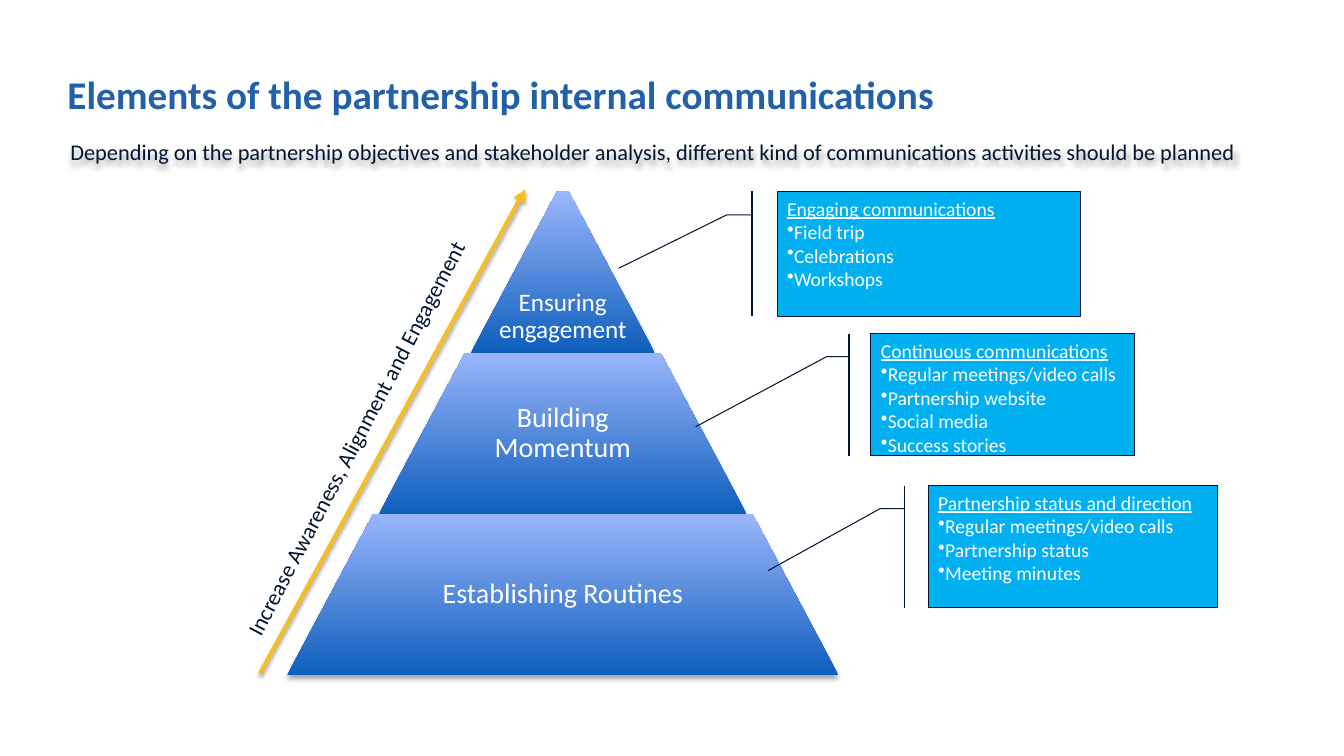
from dataclasses import dataclass

from lxml import etree
from pptx import Presentation
from pptx.dml.color import RGBColor
from pptx.enum.shapes import MSO_CONNECTOR, MSO_SHAPE
from pptx.enum.text import MSO_ANCHOR, MSO_AUTO_SIZE, PP_ALIGN
from pptx.oxml.ns import qn
from pptx.util import Pt

TRAPEZOID = MSO_SHAPE.TRAPEZOID
CALLOUT = MSO_SHAPE.LINE_CALLOUT_2_BORDER_AND_ACCENT_BAR
STRAIGHT = MSO_CONNECTOR.STRAIGHT
TOP, MIDDLE, BOTTOM = MSO_ANCHOR.TOP, MSO_ANCHOR.MIDDLE, MSO_ANCHOR.BOTTOM
LEFT, CENTER = PP_ALIGN.LEFT, PP_ALIGN.CENTER


@dataclass(frozen=True)
class Theme:
    font: str = "Calibri"
    title: RGBColor = RGBColor(0x22, 0x60, 0xA8)
    ink: RGBColor = RGBColor(0x02, 0x16, 0x31)
    white: RGBColor = RGBColor(0xFF, 0xFF, 0xFF)
    callout: RGBColor = RGBColor(0x00, 0xB0, 0xF0)
    arrow: RGBColor = RGBColor(0xF4, 0xBE, 0x28)
    band_dark: RGBColor = RGBColor(0x0E, 0x5F, 0xBC)
    band_light: RGBColor = RGBColor(0x9B, 0xB5, 0xFC)
    title_size: int = 28
    band_size: int = 20
    top_band_size: int = 18
    body_size: int = 16
    callout_size: int = 14


THEME = Theme()

# Text, type size, share of the band's width, anchor and bottom inset, from the top down
BANDS = [
    ("Ensuring engagement", THEME.top_band_size, 1, BOTTOM, 6),
    ("Building Momentum", THEME.band_size, 0.65, MIDDLE, 3),
    ("Establishing Routines", THEME.band_size, 0.65, MIDDLE, 3),
]

# Box, leader end (share of height, share of width), heading and items
CALLOUTS = [
    ((663.1, 347, 206.6, 87.1), (0.696, -0.554), "Partnership status and direction",
     ["Regular meetings/video calls", "Partnership status", "Meeting minutes"]),
    ((622.1, 238.3, 188.6, 87.1), (0.764, -0.664), "Continuous communications",
     ["Regular meetings/video calls", "Partnership website", "Social media",
      "Success stories"]),
    ((555.1, 136.8, 216.7, 89.3), (0.614, -0.522), "Engaging communications",
     ["Field trip", "Celebrations", "Workshops"]),
]


def points(box):
    return [Pt(length) for length in box]


def add_span(para, text, size, color, bold=False, underline=False):
    span = para.add_run()
    span.text = text
    font = span.font
    font.name, font.size, font.bold, font.underline = THEME.font, Pt(size), bold, underline
    font.color.rgb = color


def set_frame(frame, anchor, insets=(7.2, 3.6, 7.2, 3.6)):
    frame.word_wrap = True
    frame.auto_size = MSO_AUTO_SIZE.NONE
    frame.vertical_anchor = anchor
    (frame.margin_left, frame.margin_top,
     frame.margin_right, frame.margin_bottom) = points(insets)


def add_shadow(shape, blur=3.1, distance=1.8):
    """Append a soft downward shadow; call it after fill and line are set."""
    effects = etree.SubElement(shape.element.spPr, qn("a:effectLst"))
    shadow = etree.SubElement(
        effects, qn("a:outerShdw"), blurRad=str(Pt(blur)), dist=str(Pt(distance)),
        dir="5400000", rotWithShape="0")
    color = etree.SubElement(shadow, qn("a:srgbClr"), val="000000")
    etree.SubElement(color, qn("a:alpha"), val="35000")


def add_text(page, box, text, size, color, anchor=TOP, **frame_options):
    textbox = page.shapes.add_textbox(*points(box))
    set_frame(textbox.text_frame, anchor, **frame_options)
    add_span(textbox.text_frame.paragraphs[0], text, size, color)
    return textbox


def add_title(page, box):
    title = page.shapes.title
    title.left, title.top, title.width, title.height = points(box)
    set_frame(title.text_frame, BOTTOM, (0, 5.8, 7.2, 3.6))
    para = title.text_frame.paragraphs[0]
    para.alignment = LEFT
    add_span(para, "Elements of the partnership internal communications",
             THEME.title_size, THEME.title, bold=True)


def add_pyramid(page, box):
    """Stack equal-height bands whose widths grow evenly to the box width."""
    left, top, width, height = box
    band_height = height / len(BANDS)
    middle = left + width / 2
    for index, (text, size, share, anchor, bottom_inset) in enumerate(BANDS):
        band_width = width * (index + 1) / len(BANDS)
        band_top = top + index * band_height
        band = page.shapes.add_shape(TRAPEZOID, *points(
            (middle - band_width / 2, band_top, band_width, band_height)))
        band.adjustments[0] = 0.535
        band.fill.gradient()
        band.fill.gradient_angle = 90
        for stop, color in zip(band.fill.gradient_stops, (THEME.band_dark, THEME.band_light)):
            stop.color.rgb = color
        band.line.fill.background()
        add_shadow(band)

        label_width = band_width * share
        label = add_text(
            page, (middle - label_width / 2, band_top, label_width, band_height),
            text, size, THEME.white, anchor, insets=(3, 3, 3, bottom_inset))
        para = label.text_frame.paragraphs[0]
        para.alignment = CENTER
        para.line_spacing = 0.9


def add_callout(page, box, leader_end, heading, items):
    callout = page.shapes.add_shape(CALLOUT, *points(box))
    leader = (0.188, -0.083, 0.188, -0.167, *leader_end)
    for index, value in enumerate(leader):
        callout.adjustments[index] = value
    callout.shadow.inherit = False
    callout.fill.solid()
    callout.fill.fore_color.rgb = THEME.callout
    callout.line.color.rgb = THEME.ink
    callout.line.width = Pt(0.75)

    frame = callout.text_frame
    set_frame(frame, TOP)
    para = frame.paragraphs[0]
    para.alignment = LEFT
    add_span(para, heading, THEME.callout_size, THEME.white, underline=True)
    for item in items:
        para = frame.add_paragraph()
        para.alignment = LEFT
        etree.SubElement(para._p.get_or_add_pPr(), qn("a:buChar"), char="•")
        add_span(para, item, THEME.callout_size, THEME.white)


def add_rising_arrow(page, box):
    """Draw an arrow from the box's bottom left to its top right, with its label."""
    left, top, width, height = box
    arrow = page.shapes.add_connector(
        STRAIGHT, *points((left, top + height, left + width, top)))
    arrow.line.color.rgb = THEME.arrow
    arrow.line.width = Pt(3)
    etree.SubElement(arrow.element.spPr.find(qn("a:ln")), qn("a:tailEnd"), type="triangle")
    add_shadow(arrow)

    label_width, label_height = 351.4, 28
    label_middle = left + width / 2 - 20.5
    label_center = top + height / 2 - 4.8
    label = add_text(
        page, (label_middle - label_width / 2, label_center - label_height / 2,
               label_width, label_height),
        "Increase Awareness, Alignment and Engagement", THEME.body_size, THEME.ink)
    label.rotation = 297.7


def add_communications_page(deck):
    page = deck.slides.add_slide(deck.slide_layouts[5])
    add_title(page, (48.2, 15.1, 738.7, 72))
    add_pyramid(page, (205, 136.8, 394, 345.6))
    for callout in CALLOUTS:
        add_callout(page, *callout)
    add_rising_arrow(page, (185.8, 135.4, 189.3, 345.6))
    subtitle = add_text(
        page, (43.2, 92.9, 860.4, 31),
        "Depending on the partnership objectives and stakeholder analysis, "
        "different kind of communications activities should be planned",
        THEME.body_size, THEME.ink, MIDDLE)
    add_shadow(subtitle, blur=4, distance=3)


def main():
    deck = Presentation()
    deck.slide_width, deck.slide_height = Pt(960), Pt(540)
    add_communications_page(deck)
    deck.save("out.pptx")


if __name__ == "__main__":
    main()
